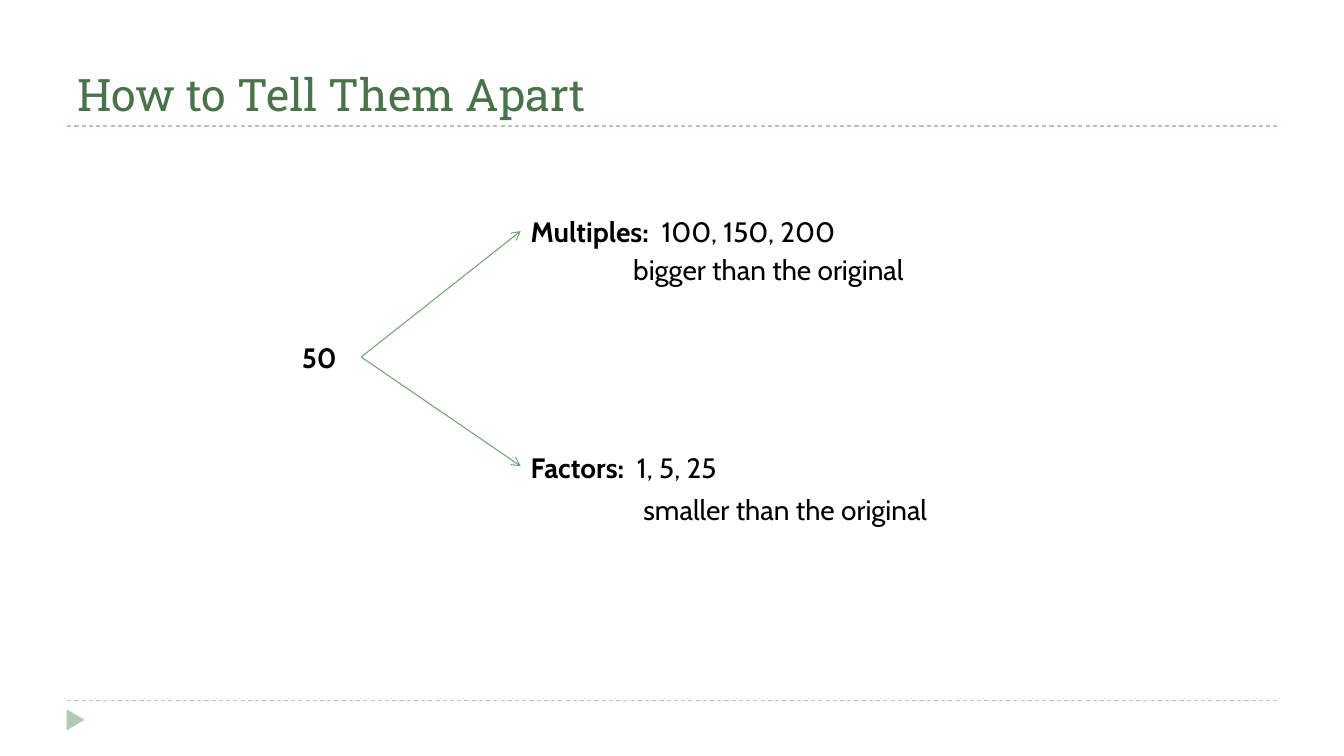
from lxml.etree import SubElement
from pptx import Presentation
from pptx.dml.color import RGBColor
from pptx.enum.dml import MSO_LINE
from pptx.enum.shapes import MSO_CONNECTOR, MSO_SHAPE
from pptx.enum.text import MSO_ANCHOR, MSO_AUTO_SIZE, PP_ALIGN
from pptx.oxml.ns import qn
from pptx.util import Emu, Pt

PALE_GREEN = "B0CCB0"
ARROW_GREEN = "72A376"
TITLE_GREEN = "4B734B"
BLACK = "000000"


def px(length):
    return Emu(length * 9525)


def color(hex_string):
    return RGBColor.from_string(hex_string)


def add_run(paragraph, text, size=20, font="Cabin", ink=BLACK, bold=False):
    run = paragraph.add_run()
    run.text = text
    run.font.size = Pt(size)
    run.font.name = font
    run.font.bold = bold
    run.font.color.rgb = color(ink)


def add_title(slide, text):
    title = slide.shapes.title
    title.left, title.top, title.width, title.height = px(64), px(16), px(1152), px(104)
    frame = title.text_frame
    frame.auto_size = MSO_AUTO_SIZE.NONE
    frame.vertical_anchor = MSO_ANCHOR.BOTTOM
    paragraph = frame.paragraphs[0]
    paragraph.alignment = PP_ALIGN.LEFT
    add_run(paragraph, text, 32, "Roboto Slab", TITLE_GREEN)


def add_text(slide, left, top, width, height, runs, alignment=PP_ALIGN.LEFT):
    box = slide.shapes.add_textbox(px(left), px(top), px(width), px(height))
    box.text_frame.word_wrap = True
    paragraph = box.text_frame.paragraphs[0]
    paragraph.alignment = alignment
    paragraph.space_before = Pt(4)
    for text, bold in runs:
        add_run(paragraph, text, bold=bold)


def add_line(slide, start, end, ink):
    line = slide.shapes.add_connector(
        MSO_CONNECTOR.STRAIGHT, px(start[0]), px(start[1]), px(end[0]), px(end[1])
    )
    line.line.color.rgb = color(ink)
    line.line.width = Pt(0.75)
    SubElement(line.element.spPr, qn("a:effectLst"))
    return line


def add_rule(slide, top):
    rule = add_line(slide, (64, top), (1216, top), PALE_GREEN)
    rule.line.dash_style = MSO_LINE.DASH


def add_arrow(slide, start, end):
    arrow = add_line(slide, start, end, ARROW_GREEN)
    SubElement(arrow.line._get_or_add_ln(), qn("a:tailEnd"), type="arrow")


def add_marker(slide):
    marker = slide.shapes.add_shape(
        MSO_SHAPE.ISOSCELES_TRIANGLE, px(62), px(677), px(20), px(17)
    )
    marker.rotation = 90
    marker.shadow.inherit = False
    marker.fill.solid()
    marker.fill.fore_color.rgb = color(PALE_GREEN)
    marker.line.fill.background()


def add_branch(slide, top, label, numbers, note, note_left, note_top):
    add_text(slide, 496, top, 472, 40, [(label, True), (numbers, False)])
    add_arrow(slide, (344, 340), (496, top + 20))
    add_text(slide, note_left, note_top, 472, 64, [(note, False)], PP_ALIGN.CENTER)


def main():
    presentation = Presentation()
    presentation.slide_width, presentation.slide_height = px(1280), px(720)
    slide = presentation.slides.add_slide(presentation.slide_layouts[5])
    for top in (667, 120):
        add_rule(slide, top)
    add_marker(slide)
    add_title(slide, "How to Tell Them Apart")
    add_text(slide, 264, 320, 80, 40, [("50", True)], PP_ALIGN.CENTER)
    add_branch(slide, 200, "Multiples:", "  100, 150, 200", "bigger than the original", 496, 236)
    add_branch(slide, 424, "Factors:", "  1, 5, 25", "smaller than the original", 512, 464)
    presentation.save("out.pptx")


if __name__ == "__main__":
    main()
